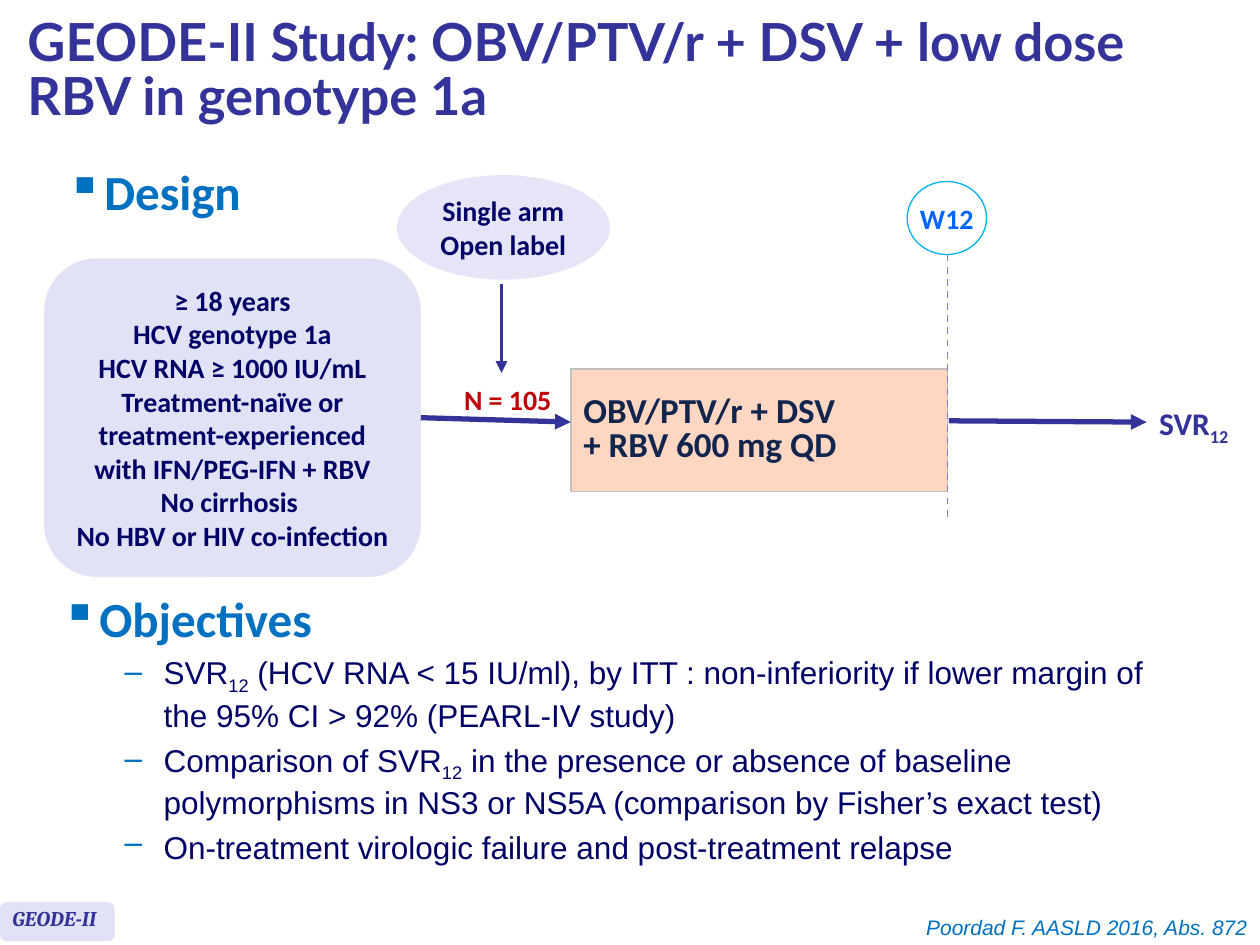
from lxml.etree import SubElement
from pptx import Presentation
from pptx.dml.color import RGBColor
from pptx.enum.dml import MSO_LINE
from pptx.enum.shapes import MSO_CONNECTOR, MSO_SHAPE
from pptx.enum.text import MSO_ANCHOR, PP_ALIGN
from pptx.oxml.ns import qn
from pptx.util import Inches, Pt

INDIGO, NAVY, BLUE, LILAC = "333399", "000066", "0070C0", "E2E2F6"
CENTER, RIGHT = PP_ALIGN.CENTER, PP_ALIGN.RIGHT


def rgb(color):
    return RGBColor.from_string(color)


def add_bullet(paragraph, char, left, hanging):
    properties = paragraph._p.get_or_add_pPr()
    properties.set("marL", str(Inches(left)))
    properties.set("indent", str(-Inches(hanging)))
    color = SubElement(properties, qn("a:buClr"))
    SubElement(color, qn("a:srgbClr"), val=BLUE)
    SubElement(properties, qn("a:buChar"), char=char)


def write(frame, text, size=16, font="Calibri", color=NAVY, bold=True, italic=False,
          align=None, bullet=None, spacing=None, before=None):
    """Add one paragraph; text between ~ marks is subscript, \\v breaks the line."""
    first = frame.paragraphs[0]
    paragraph = frame.add_paragraph() if first.runs else first
    if bullet:
        add_bullet(paragraph, *bullet)
    paragraph.alignment = align
    if spacing:
        paragraph.line_spacing = spacing
    if before:
        paragraph.space_before = Pt(before)
    for line_number, line in enumerate(text.split("\v")):
        if line_number:
            paragraph.add_line_break()
        for position, part in enumerate(line.split("~")):
            if not part:
                continue
            run = paragraph.add_run()
            run.text = part
            run.font.size, run.font.name = Pt(size), font
            run.font.bold, run.font.italic = bold, italic
            run.font.color.rgb = rgb(color)
            if position % 2:
                run.font._element.set("baseline", "-25000")


def add_text(shapes, box, wrap=True, anchor=MSO_ANCHOR.TOP):
    frame = shapes.add_textbox(*map(Inches, box)).text_frame
    frame.word_wrap = wrap
    frame.vertical_anchor = anchor
    return frame


def add_panel(shapes, kind, box, fill, line=None, wrap=True):
    panel = shapes.add_shape(kind, *map(Inches, box))
    panel.shadow.inherit = False
    panel.fill.solid()
    panel.fill.fore_color.rgb = rgb(fill)
    if line:
        panel.line.color.rgb = rgb(line)
        panel.line.width = Pt(0.75)
    else:
        panel.line.fill.background()
    panel.text_frame.word_wrap = wrap
    panel.text_frame.vertical_anchor = MSO_ANCHOR.MIDDLE
    return panel


def add_line(shapes, start, end, width, color=INDIGO, arrow=True):
    """Draw a solid arrow, or a dashed line when arrow is False."""
    line = shapes.add_connector(MSO_CONNECTOR.STRAIGHT, *map(Inches, start + end))
    line.line.color.rgb = rgb(color)
    line.line.width = Pt(width)
    if arrow:
        SubElement(line.line._get_or_add_ln(), qn("a:tailEnd"), type="triangle")
    else:
        line.line.dash_style = MSO_LINE.DASH
    SubElement(line._element.spPr, qn("a:effectLst"))
    return line


def add_regimen(shapes, box, text):
    table = shapes.add_table(1, 1, *map(Inches, box)).table
    table.first_row = table.horz_banding = False
    cell = table.cell(0, 0)
    cell.vertical_anchor = MSO_ANCHOR.MIDDLE
    properties = cell._tc.get_or_add_tcPr()
    for side in ("lnL", "lnR", "lnT", "lnB"):
        border = SubElement(properties, qn(f"a:{side}"), w=str(Pt(1)))
        SubElement(SubElement(border, qn("a:solidFill")), qn("a:srgbClr"), val="C0C0C0")
    cell.fill.solid()
    cell.fill.fore_color.rgb = rgb("FFD6C2")
    write(cell.text_frame, text, size=20, color="12254C", spacing=0.8)


def add_design(shapes):
    heading = add_text(shapes, (0.43, 1.23, 1.73, 0.47))
    write(heading, "Design", size=28, color=BLUE, bullet=("▪", 0.3, 0.3))

    study_type = add_panel(shapes, MSO_SHAPE.OVAL, (3.15, 1.39, 1.69, 0.83), "E5E5F7", wrap=False)
    for text in ("Single arm", "Open label"):
        write(study_type.text_frame, text, align=CENTER)
    add_line(shapes, (3.98, 2.25), (3.98, 2.96), 2.25)

    population = add_panel(shapes, MSO_SHAPE.ROUNDED_RECTANGLE, (0.35, 2.05, 2.99, 2.53), LILAC)
    criteria = (
        "≥ 18 years",
        "HCV genotype 1a",
        "HCV RNA ≥ 1000 IU/mL",
        "Treatment-naïve or treatment-experienced with IFN/PEG-IFN + RBV",
        "No cirrhosis ",
        "No HBV or HIV co-infection",
    )
    for text in criteria:
        write(population.text_frame, text, align=CENTER)

    enrolled = add_text(shapes, (3.58, 2.99, 0.9, 0.37), wrap=False)
    write(enrolled, "N = 105", color="C00000", align=CENTER)
    add_regimen(shapes, (4.53, 2.93, 2.99, 0.97), "OBV/PTV/r + DSV \v+ RBV 600 mg QD")
    enrolment = add_line(shapes, (3.34, 3.34), (4.53, 3.35), 3)
    enrolment.begin_connect(population, 3)

    add_line(shapes, (7.53, 3.34), (9.1, 3.35), 3)
    outcome = add_text(shapes, (9.1, 3.16, 0.78, 0.4), wrap=False)
    write(outcome, "SVR~12~", size=18, color=INDIGO)
    add_line(shapes, (7.52, 2.02), (7.52, 4.1), 1, color="7E7ED4", arrow=False)
    week = add_panel(shapes, MSO_SHAPE.OVAL, (7.2, 1.44, 0.63, 0.58), "FFFFFF", "00B0F0", wrap=False)
    write(week.text_frame, "W12", color="0066FF", align=CENTER)


def add_objectives(shapes):
    frame = add_text(shapes, (0.39, 4.62, 9.02, 2.52))
    write(frame, "Objectives", size=28, color=BLUE, bullet=("▪", 0.3, 0.3))
    objectives = (
        "SVR~12~ (HCV RNA < 15 IU/ml), by ITT : non-inferiority if lower margin "
        "of the 95% CI > 92% (PEARL-IV study)",
        "Comparison of SVR~12~ in the presence or absence of baseline "
        "polymorphisms in NS3 or NS5A (comparison by Fisher’s exact test)",
        "On-treatment virologic failure and post-treatment relapse",
    )
    for text in objectives:
        write(frame, text, size=18, font="Arial", bold=False,
              bullet=("–", 0.81, 0.31), before=3.6)


def add_footer(shapes):
    tag = shapes.add_group_shape().shapes
    add_panel(tag, MSO_SHAPE.ROUNDED_RECTANGLE, (0, 7.16, 0.91, 0.31), LILAC)
    write(add_text(tag, (0, 7.14, 0.91, 0.3)), "GEODE-II",
          size=12, font="Cambria", color=INDIGO, italic=True)
    write(add_text(shapes, (2.64, 7.21, 7.36, 0.3)), "Poordad F. AASLD 2016, Abs. 872",
          size=12, font="Arial", color=BLUE, bold=False, italic=True, align=RIGHT)


def main():
    presentation = Presentation()
    presentation.slide_width, presentation.slide_height = Inches(10), Inches(7.5)
    shapes = presentation.slides.add_slide(presentation.slide_layouts[6]).shapes
    title = add_text(shapes, (0.12, 0.08, 9.53, 0.99), anchor=MSO_ANCHOR.MIDDLE)
    write(title, "GEODE-II Study: OBV/PTV/r + DSV + low dose RBV in genotype 1a",
          size=30, font="Lato", color=INDIGO, spacing=0.85)
    add_design(shapes)
    add_objectives(shapes)
    add_footer(shapes)
    presentation.save("out.pptx")


if __name__ == "__main__":
    main()
